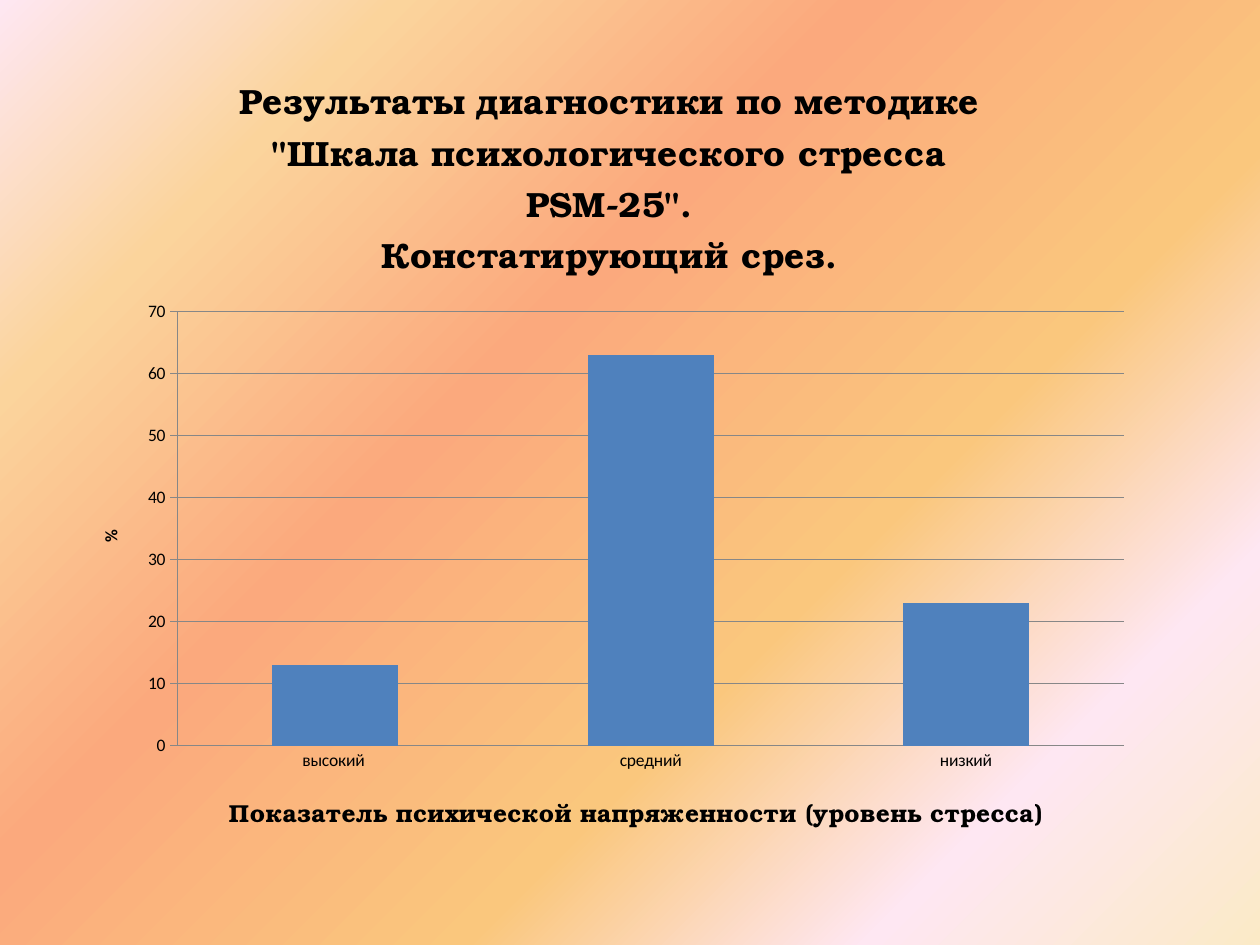
import dataclasses

import lxml.etree
import pptx
import pptx.chart.data
import pptx.dml.color
import pptx.enum.chart
import pptx.oxml.ns
import pptx.util

PX = pptx.util.Inches(1) // 126


@dataclasses.dataclass(frozen=True)
class Theme:
    text: str = "000000"
    bar: str = "4F81BD"
    line: str = "878787"
    body_font: str = "Calibri"
    title_font: str = "TeX Gyre Bonum"
    body_size: int = 10
    axis_title_size: int = 14
    title_size: int = 20
    line_width: float = 0.75
    background: tuple = (
        (0, "FBEAC7"), (18, "FEE7F2"), (36, "FAC77D"),
        (61, "FBA97D"), (82, "FBD49C"), (100, "FEE7F2"),
    )


def rgb(value):
    return pptx.dml.color.RGBColor.from_string(value)


class SlideBuilder:
    def __init__(self, deck, theme):
        self.theme = theme
        self.page = deck.slides.add_slide(deck.slide_layouts[6])

    def background(self):
        self.page.background.fill.gradient()
        qn = pptx.oxml.ns.qn
        gradient = self.page.element.find(".//" + qn("a:gradFill"))
        for child in list(gradient):
            gradient.remove(child)
        stops = lxml.etree.SubElement(gradient, qn("a:gsLst"))
        for percent, color in self.theme.background:
            stop = lxml.etree.SubElement(stops, qn("a:gs"), pos=str(percent * 1000))
            lxml.etree.SubElement(stop, qn("a:srgbClr"), val=color)
        path = lxml.etree.SubElement(gradient, qn("a:path"), path="circle")
        lxml.etree.SubElement(path, qn("a:fillToRect"), l="100000", t="100000")

    def style_font(self, font, name, size, bold):
        font.name = name
        font.size = pptx.util.Pt(size)
        font.bold = bold
        font.color.rgb = rgb(self.theme.text)

    def style_line(self, line):
        line.color.rgb = rgb(self.theme.line)
        line.width = pptx.util.Pt(self.theme.line_width)

    def title(self, owner, text, name, size):
        frame = owner.text_frame
        frame.text = text
        for para in frame.paragraphs:
            self.style_font(para.font, name, size, True)

    def column_chart(self, left, top, width, height, categories, values,
                     title, category_title, value_title):
        theme = self.theme
        data = pptx.chart.data.CategoryChartData()
        data.categories = categories
        data.add_series("Series 1", values)
        chart = self.page.shapes.add_chart(
            pptx.enum.chart.XL_CHART_TYPE.COLUMN_CLUSTERED,
            left * PX, top * PX, width * PX, height * PX, data,
        ).chart
        chart.has_legend = False
        self.style_font(chart.font, theme.body_font, theme.body_size, False)

        chart.has_title = True
        chart.chart_title.include_in_layout = False
        self.title(chart.chart_title, title, theme.title_font, theme.title_size)
        self.title(chart.category_axis.axis_title, category_title,
                   theme.title_font, theme.axis_title_size)
        self.title(chart.value_axis.axis_title, value_title,
                   theme.body_font, theme.body_size)

        marks = pptx.enum.chart.XL_TICK_MARK
        chart.category_axis.major_tick_mark = marks.NONE
        chart.value_axis.major_tick_mark = marks.OUTSIDE
        for axis in (chart.category_axis, chart.value_axis):
            axis.minor_tick_mark = marks.NONE
            self.style_line(axis.format.line)
        chart.value_axis.minimum_scale = 0
        chart.value_axis.maximum_scale = 70
        chart.value_axis.major_unit = 10
        self.style_line(chart.value_axis.major_gridlines.format.line)

        plot = chart.plots[0]
        plot.gap_width = 150
        plot.vary_by_categories = False
        fill = plot.series[0].format.fill
        fill.solid()
        fill.fore_color.rgb = rgb(theme.bar)


def main():
    deck = pptx.Presentation()
    deck.slide_width = 1260 * PX
    deck.slide_height = 945 * PX
    slide = SlideBuilder(deck, Theme())
    slide.background()
    slide.column_chart(
        74, 45, 1071, 814,
        ("высокий ", "средний", "низкий"), (13, 63, 23),
        'Результаты диагностики по методике "Шкала психологического стресса PSM-25".\n'
        "Констатирующий срез.",
        "Показатель психической напряженности (уровень стресса)",
        "%",
    )
    deck.save("out.pptx")


if __name__ == "__main__":
    main()
